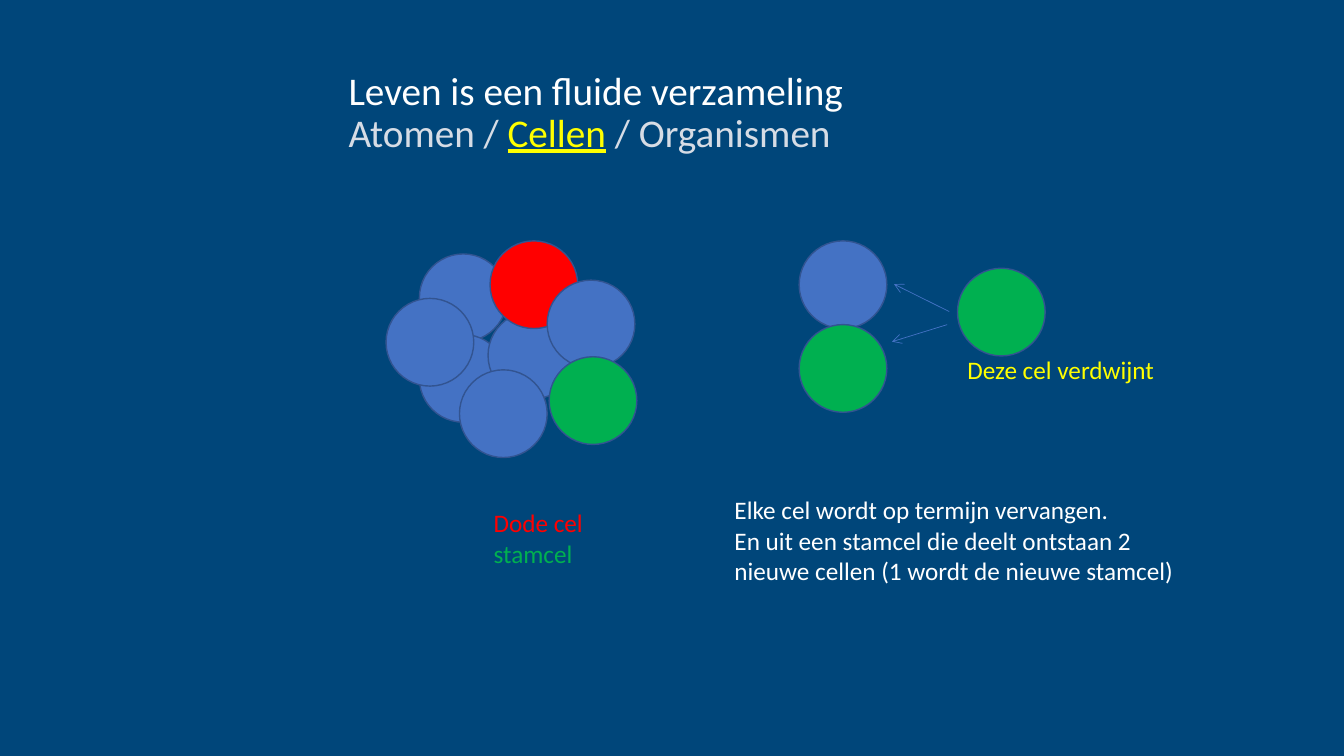
from dataclasses import dataclass

import pptx
import pptx.dml.color
import pptx.enum.shapes
import pptx.enum.text
import pptx.oxml
import pptx.oxml.ns
import pptx.util
from pptx.util import Cm


@dataclass(frozen=True)
class Theme:
    font: str = "Calibri"
    title_size: int = 28
    text_size: int = 18
    background: str = "00467A"
    white: str = "FFFFFF"
    muted: str = "D6DCE5"
    accent: str = "FFFF00"
    cell: str = "4472C4"
    outline: str = "325491"
    dead: str = "FF0000"
    stem: str = "00B050"


THEME = Theme()
CELL_SIZE = Cm(2.21)


def rgb(value):
    return pptx.dml.color.RGBColor.from_string(value)


def write(paragraph, text, color=THEME.white, size=THEME.text_size, underline=None):
    run = paragraph.add_run()
    run.text = text
    run.font.name = THEME.font
    run.font.size = pptx.util.Pt(size)
    run.font.color.rgb = rgb(color)
    run.font.underline = underline


def add_caption(slide, box, lines):
    frame = slide.shapes.add_textbox(*box).text_frame
    frame.word_wrap = True
    frame.auto_size = pptx.enum.text.MSO_AUTO_SIZE.SHAPE_TO_FIT_TEXT
    for index, (text, color) in enumerate(lines):
        paragraph = frame.add_paragraph() if index else frame.paragraphs[0]
        write(paragraph, text, color=color)


def add_cell(slide, left, top, color):
    cell = slide.shapes.add_shape(
        pptx.enum.shapes.MSO_SHAPE.OVAL, left, top, CELL_SIZE, CELL_SIZE
    )
    cell.shadow.inherit = False
    cell.fill.solid()
    cell.fill.fore_color.rgb = rgb(color)
    cell.line.color.rgb = rgb(THEME.outline)
    cell.line.width = pptx.util.Pt(1)


def add_arrow(slide, start, end):
    arrow = slide.shapes.add_connector(
        pptx.enum.shapes.MSO_CONNECTOR.STRAIGHT, *start, *end
    )
    arrow.line.color.rgb = rgb(THEME.cell)
    arrow.line.width = pptx.util.Pt(0.5)
    namespace = pptx.oxml.ns.nsdecls("a")
    properties = arrow.line._get_or_add_ln()
    properties.append(pptx.oxml.parse_xml(f'<a:tailEnd {namespace} type="arrow"/>'))
    arrow._element.spPr.append(pptx.oxml.parse_xml(f"<a:effectLst {namespace}/>"))


def add_heading(slide, left, top, width, height):
    heading = slide.shapes.title
    heading.left, heading.top, heading.width, heading.height = left, top, width, height
    frame = heading.text_frame
    frame.word_wrap = True
    frame.auto_size = pptx.enum.text.MSO_AUTO_SIZE.NONE
    frame.vertical_anchor = pptx.enum.text.MSO_ANCHOR.MIDDLE
    paragraph = frame.paragraphs[0]
    paragraph.alignment = pptx.enum.text.PP_ALIGN.LEFT
    paragraph.line_spacing = 0.9
    write(paragraph, "Leven is een fluide verzameling", size=THEME.title_size)
    paragraph.add_line_break()
    write(paragraph, "Atomen / ", color=THEME.muted, size=THEME.title_size)
    write(paragraph, "Cellen", color=THEME.accent, size=THEME.title_size, underline=True)
    write(paragraph, " / Organismen", color=THEME.muted, size=THEME.title_size)


def add_cluster(slide, left, top):
    cells = [
        (0.84, 0.33, THEME.cell),
        (0.84, 2.36, THEME.cell),
        (2.57, 1.78, THEME.cell),
        (2.62, 0, THEME.dead),
        (4.06, 0.99, THEME.cell),
        (0, 1.45, THEME.cell),
        (1.85, 3.25, THEME.cell),
        (4.11, 2.92, THEME.stem),
    ]
    for x, y, color in cells:
        add_cell(slide, left + Cm(x), top + Cm(y), color)
    legend = [("Dode cel", THEME.dead), ("stamcel", THEME.stem)]
    add_caption(slide, (left + Cm(2.46), top + Cm(6.6), Cm(5.49), Cm(1.8)), legend)


def add_division(slide, left, top):
    mother_left = left + Cm(3.99)
    add_cell(slide, mother_left, top + Cm(0.69), THEME.stem)
    add_cell(slide, left, top, THEME.cell)
    add_cell(slide, left, top + Cm(2.11), THEME.stem)
    for x1, y1, x2, y2 in [(3.78, 1.78, 2.39, 1.09), (3.73, 2.11, 2.34, 2.54)]:
        add_arrow(
            slide,
            (left + Cm(x1), top + Cm(y1)),
            (left + Cm(x2), top + Cm(y2)),
        )
    explanation = [
        ("Elke cel wordt op termijn vervangen.", THEME.white),
        (
            "En uit een stamcel die deelt ontstaan 2 nieuwe cellen "
            "(1 wordt de nieuwe stamcel)",
            THEME.white,
        ),
    ]
    add_caption(
        slide, (left - Cm(1.88), top + Cm(6.27), Cm(12.5), Cm(2.57)), explanation
    )
    add_caption(
        slide,
        (mother_left, top + Cm(2.74), Cm(6.35), Cm(1.02)),
        [("Deze cel verdwijnt", THEME.accent)],
    )


def main():
    presentation = pptx.Presentation()
    presentation.slide_width = Cm(33.87)
    presentation.slide_height = Cm(19.05)
    slide = presentation.slides.add_slide(presentation.slide_layouts[5])
    slide.background.fill.solid()
    slide.background.fill.fore_color.rgb = rgb(THEME.background)
    add_heading(slide, Cm(8.53), Cm(1.02), Cm(23.01), Cm(3.68))
    add_cluster(slide, Cm(9.73), Cm(6.07))
    add_division(slide, Cm(20.14), Cm(6.07))
    presentation.save("out.pptx")


if __name__ == "__main__":
    main()
